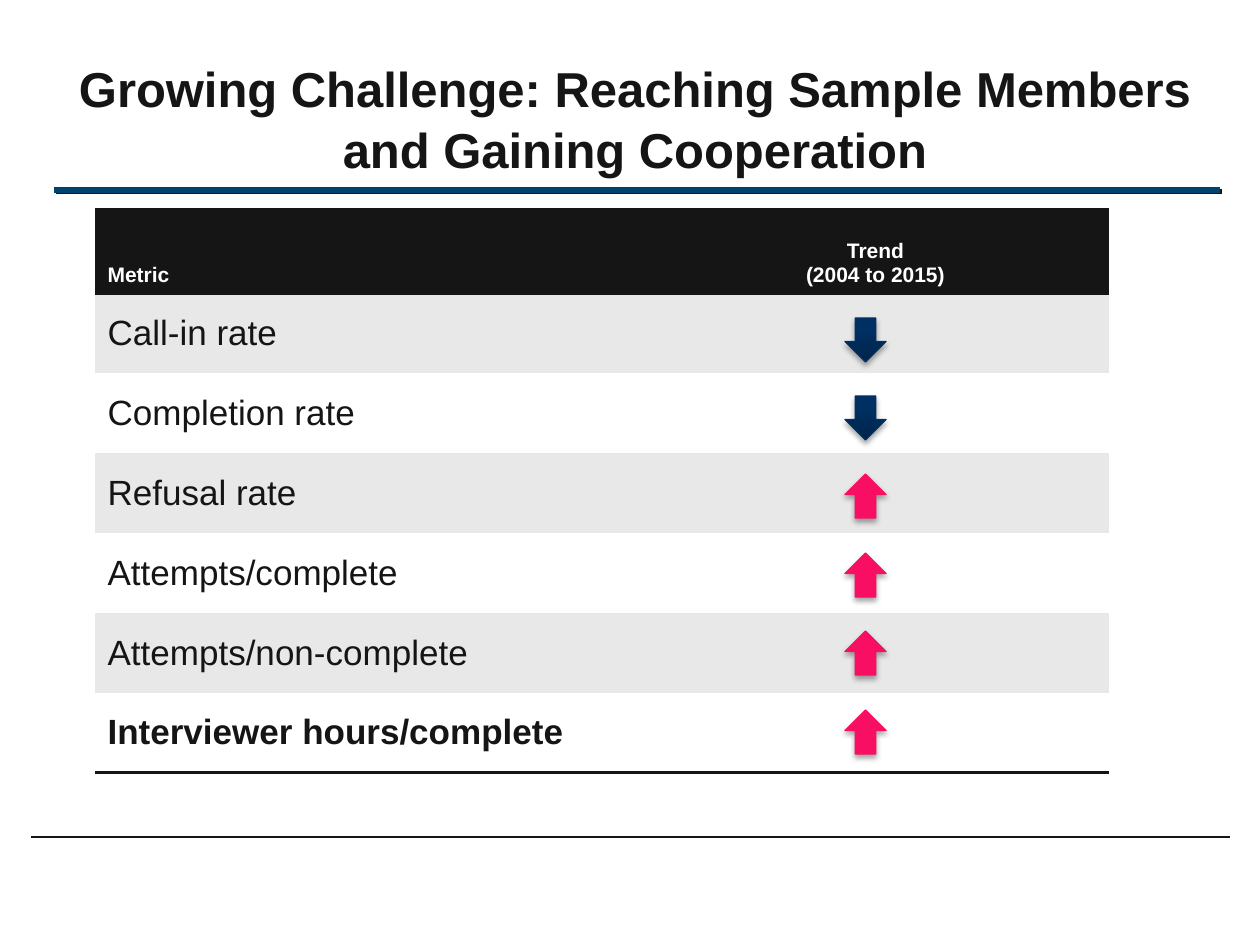
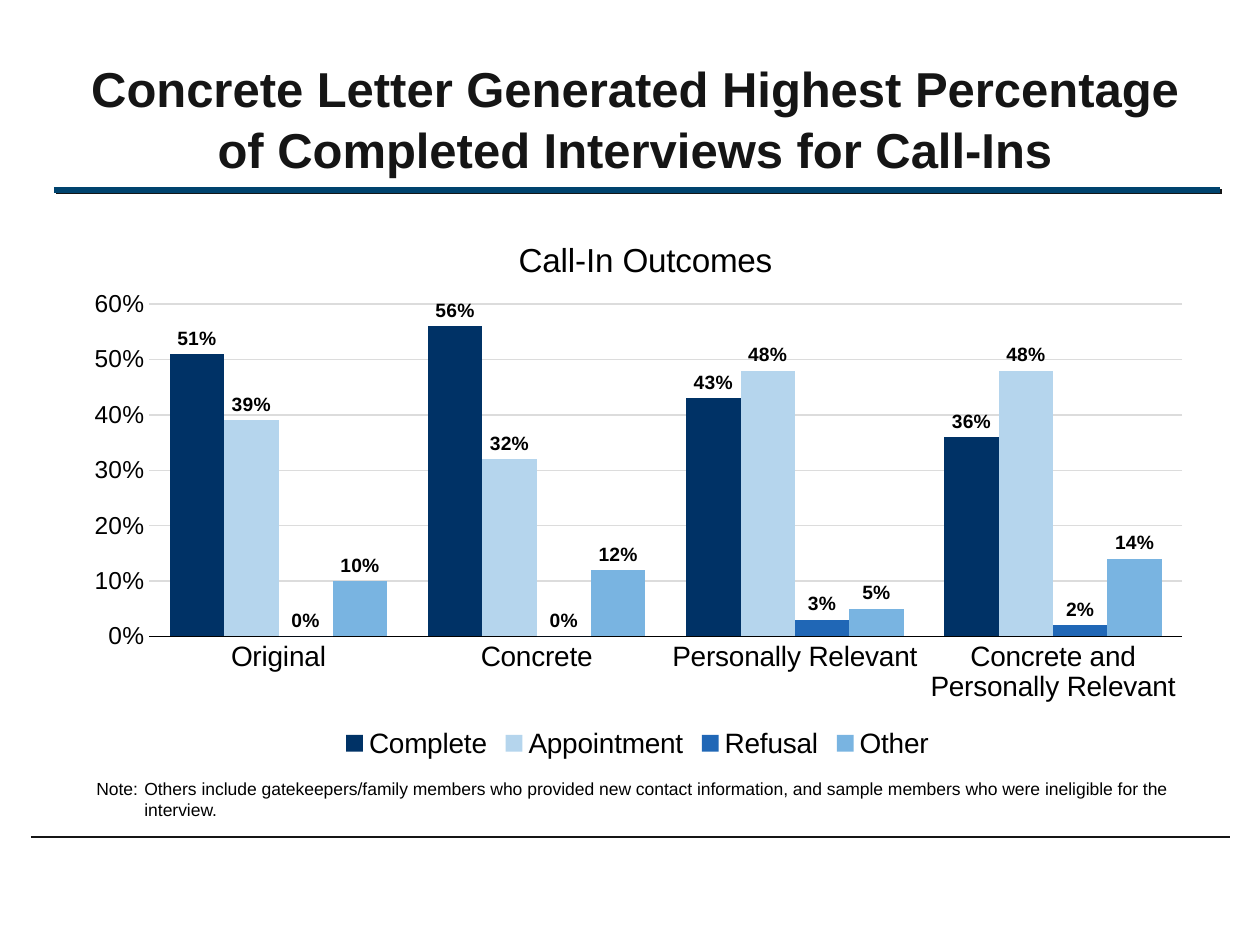
"""Build two slides on survey response trends and call-in outcomes."""
import pptx
import pptx.chart.data
import pptx.dml.color
import pptx.enum.chart
import pptx.enum.shapes
import pptx.enum.text
import pptx.oxml
import pptx.oxml.ns
import pptx.util

SCALE = 914400 / 126
FONT = "Arial"
HUES = {
    "ink": "151515", "black": "000000", "white": "FFFFFF", "band": "E8E8E8",
    "rule": "00436E", "grid": "DCDCDC", "rise": "F80E62",
    "fall": "003164", "deep": "00254C", "mid": "003063",
    "Complete": "003266", "Appointment": "B5D5ED",
    "Refusal": "2067B6", "Other": "79B4E1",
}
PLAIN = "{2D5ABB26-0587-4C30-8999-92F81FD0307C}"
ALIGN = pptx.enum.text.PP_ALIGN
ANCHOR = pptx.enum.text.MSO_ANCHOR
SHAPE = pptx.enum.shapes.MSO_SHAPE
CHART = pptx.enum.chart


def px(*sizes):
    """Turn px lengths into EMU."""
    return [pptx.util.Emu(round(size * SCALE)) for size in sizes]


def hue(name):
    """Return a named colour."""
    return pptx.dml.color.RGBColor.from_string(HUES[name])


def node(text):
    """Parse one DrawingML element."""
    space = pptx.oxml.ns.nsdecls("a")
    return pptx.oxml.parse_xml(text.replace(" ", f" {space} ", 1))


def style(font, size, color="black", bold=False):
    """Format one font."""
    font.name, font.size, font.bold = FONT, pptx.util.Pt(size), bold
    font.color.rgb = hue(color)


def shade(shape, color=None, alpha=100, blur=0, drop=0, angle=0):
    """Give a shape one outer shadow, or none."""
    effect = node("<a:effectLst />")
    if color:
        effect.append(node(
            f'<a:outerShdw blurRad="{round(blur * 12700)}" dist="{round(drop * 12700)}"'
            f' dir="{angle * 60000}" rotWithShape="0"><a:srgbClr val="{HUES[color]}">'
            f'<a:alpha val="{alpha * 1000}"/></a:srgbClr></a:outerShdw>'))
    shape._element.spPr.append(effect)


def place(item, x, y, w, h):
    """Set a fractional layout on a chart part."""
    old = item.find(pptx.oxml.ns.qn("c:layout"))
    if old is not None:
        item.remove(old)
    inner = '<c:layoutTarget val="inner"/>' if w else ""
    size = f'<c:w val="{w}"/><c:h val="{h}"/>' if w else ""
    layout = pptx.oxml.parse_xml(
        f'<c:layout {pptx.oxml.ns.nsdecls("c")}><c:manualLayout>{inner}'
        f'<c:xMode val="edge"/><c:yMode val="edge"/><c:x val="{x}"/><c:y val="{y}"/>'
        f'{size}</c:manualLayout></c:layout>')
    text = item.find(pptx.oxml.ns.qn("c:tx"))
    if text is None:
        item.insert(0, layout)
    else:
        text.addnext(layout)


class Deck:
    """Hold the shared style and the current slide."""

    def __init__(self):
        """Start a blank deck."""
        self.file = pptx.Presentation()
        self.file.slide_width, self.file.slide_height = px(1260, 945)
        self.slide = None

    def page(self, title):
        """Add a slide with its title and two rules."""
        self.slide = self.file.slides.add_slide(self.file.slide_layouts[5])
        self.rule(54, 1220, 190, "rule", 3)
        shade(self.rule(31, 1230, 837, "ink", 1.5))
        head = self.slide.shapes.title
        head.left, head.top, head.width, head.height = px(53, 28, 1164, 157)
        frame = head.text_frame
        frame.text = title
        frame.word_wrap = True
        frame.auto_size = pptx.enum.text.MSO_AUTO_SIZE.NONE
        frame.vertical_anchor = ANCHOR.BOTTOM
        para = frame.paragraphs[0]
        para.alignment, para.line_spacing = ALIGN.CENTER, 1.05
        style(para.runs[0].font, 28, "ink", True)
        shade(self.slide.shapes[1], "ink", drop=1.4, angle=45)

    def rule(self, left, right, y, color, width):
        """Draw a level line."""
        line = self.slide.shapes.add_connector(
            pptx.enum.shapes.MSO_CONNECTOR.STRAIGHT, *px(left, y, right, y))
        line.line.color.rgb = hue(color)
        line.line.width = pptx.util.Pt(width)
        return line

    def cell(self, cell, text, fill, size, color, bold):
        """Fill one table cell."""
        cell.fill.solid()
        cell.fill.fore_color.rgb = hue(fill)
        cell.vertical_anchor = ANCHOR.MIDDLE
        cell.text_frame.text = text
        for para in cell.text_frame.paragraphs:
            for run in para.runs:
                style(run.font, size, color, bold)

    def edge(self, cell, *sides):
        """Draw dark borders on the given sides of a cell."""
        props = cell._tc.get_or_add_tcPr()
        for spot, side in enumerate(sides):
            props.insert(spot, node(
                f'<a:ln{side} w="25400"><a:solidFill><a:srgbClr val="{HUES["ink"]}"/>'
                f'</a:solidFill></a:ln{side}>'))

    def table(self, heads, rows):
        """Add a banded table of metrics."""
        frame = self.slide.shapes.add_table(
            len(rows) + 1, len(heads), *px(95, 210, 1014, 563))
        next(frame._element.iter(pptx.oxml.ns.qn("a:tableStyleId"))).text = PLAIN
        grid = frame.table
        for col, width in zip(grid.columns, px(547, 467)):
            col.width = width
        for row in grid.rows:
            row.height = px(80)[0]
        grid.rows[0].height = px(83)[0]
        for col, text in enumerate(heads):
            cell = grid.cell(0, col)
            self.cell(cell, text, "ink", 12, "white", True)
            cell.vertical_anchor = ANCHOR.BOTTOM
            self.edge(cell, "T", "B")
        for para in grid.cell(0, 1).text_frame.paragraphs:
            para.alignment = ALIGN.CENTER
        for row, text in enumerate(rows, 1):
            last = row == len(rows)
            for col, words in enumerate((text, "")):
                cell = grid.cell(row, col)
                self.cell(cell, words, "band" if row % 2 else "white", 20, "ink", last)
                if last:
                    self.edge(cell, "B")

    def arrow(self, y, rise):
        """Add a trend arrow."""
        kind = SHAPE.UP_ARROW if rise else SHAPE.DOWN_ARROW
        arrow = self.slide.shapes.add_shape(kind, *px(845, y, 41, 44))
        if rise:
            arrow.fill.solid()
            arrow.fill.fore_color.rgb = hue("rise")
        else:
            arrow.fill.gradient()
            arrow.fill.gradient_angle = 90
            stops = arrow.fill.gradient_stops
            for stop, spot, color in zip(stops, (0, 0.8), ("deep", "mid")):
                stop.position, stop.color.rgb = spot, hue(color)
        arrow.line.color.rgb = hue("rise" if rise else "fall")
        arrow.line.width = pptx.util.Pt(0.75)
        shade(arrow, "black", 35, 3.1, 1.8, 90)

    def chart(self, title, groups, series):
        """Add a clustered column chart of shares."""
        data = pptx.chart.data.CategoryChartData(number_format="0%")
        data.categories = groups
        for name, shares in series.items():
            data.add_series(name, shares)
        chart = self.slide.shapes.add_chart(
            CHART.XL_CHART_TYPE.COLUMN_CLUSTERED, *px(70, 210, 1135, 554), data).chart
        style(chart.font, 10, "ink")
        chart.has_title = True
        chart.chart_title.text_frame.text = title
        style(chart.chart_title.text_frame.paragraphs[0].runs[0].font, 19)
        place(chart.chart_title._element, 0.39, 0.04, None, None)
        place(chart._chartSpace.chart.plotArea, 0.07, 0.17, 0.91, 0.6)
        chart.has_legend = True
        chart.legend.position = CHART.XL_LEGEND_POSITION.BOTTOM
        chart.legend.include_in_layout = False
        style(chart.legend.font, 16)
        for axis, size in ((chart.category_axis, 16), (chart.value_axis, 14)):
            axis.major_tick_mark = axis.minor_tick_mark = CHART.XL_TICK_MARK.NONE
            style(axis.tick_labels.font, size)
        base = chart.category_axis.format.line
        base.color.rgb, base.width = hue("black"), pptx.util.Pt(0.75)
        axis = chart.value_axis
        axis.minimum_scale, axis.maximum_scale, axis.major_unit = 0, 0.6, 0.1
        axis.tick_labels.number_format = "0%"
        axis.tick_labels.number_format_is_linked = False
        axis.format.line.fill.background()
        grid = axis.major_gridlines.format.line
        grid.color.rgb, grid.width = hue("grid"), pptx.util.Pt(0.75)
        plot = chart.plots[0]
        plot.gap_width, plot.overlap, plot.vary_by_categories = 75, 0, False
        for bars in plot.series:
            bars.format.fill.solid()
            bars.format.fill.fore_color.rgb = hue(bars.name)
            tags = bars.data_labels
            tags.show_value = True
            tags.position = CHART.XL_LABEL_POSITION.OUTSIDE_END
            tags.number_format, tags.number_format_is_linked = "0%", False
            style(tags.font, 11, bold=True)

    def note(self, text):
        """Add a note with a hanging indent."""
        frame = self.slide.shapes.add_textbox(*px(84, 772, 1108, 55)).text_frame
        frame.word_wrap = True
        frame.text = text
        para = frame.paragraphs[0]
        props = para._p.get_or_add_pPr()
        hang = px(48)[0]
        props.set("marL", str(hang))
        props.set("indent", str(-hang))
        for run in para.runs:
            style(run.font, 10)


def main():
    """Build both slides and save them."""
    deck = Deck()
    deck.page("Growing Challenge: Reaching Sample Members and Gaining Cooperation")
    trends = {
        "Call-in rate": False, "Completion rate": False, "Refusal rate": True,
        "Attempts/complete": True, "Attempts/non-complete": True,
        "Interviewer hours/complete": True,
    }
    deck.table(("Metric", "Trend\n(2004 to 2015)"), list(trends))
    for step, rise in enumerate(trends.values()):
        deck.arrow(318 + step * 392 // 5, rise)

    deck.page("Concrete Letter Generated Highest Percentage of Completed Interviews"
              " for Call-Ins")
    deck.chart(
        "Call-In Outcomes",
        ("Original", "Concrete", "Personally Relevant",
         "Concrete and Personally Relevant"),
        {"Complete": (0.51, 0.56, 0.43, 0.36),
         "Appointment": (0.39, 0.32, 0.48, 0.48),
         "Refusal": (0, 0, 0.03, 0.02),
         "Other": (0.1, 0.12, 0.05, 0.14)})
    deck.note("Note:\tOthers include gatekeepers/family members who provided new contact"
              " information, and sample members who were ineligible for the interview.")
    deck.file.save("out.pptx")


if __name__ == "__main__":
    main()
